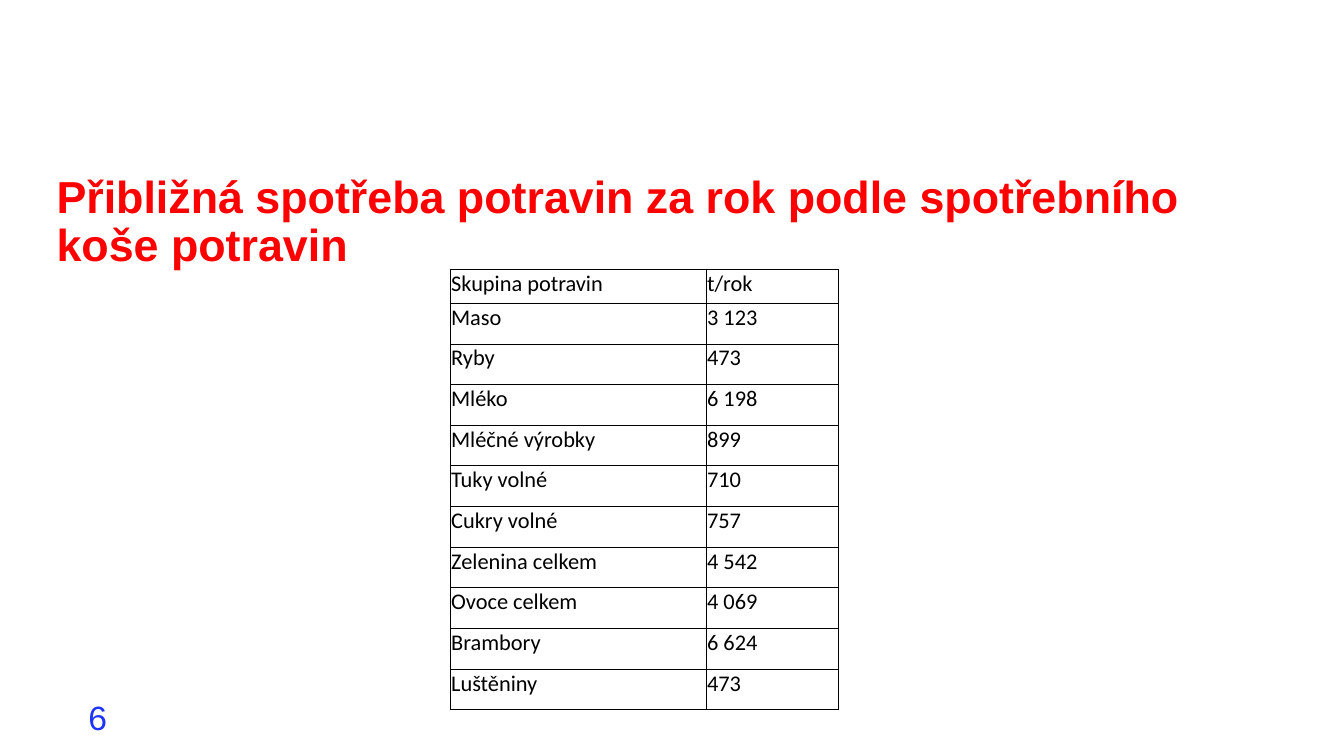
from lxml.etree import SubElement, Element
from pptx import Presentation
from pptx.dml.color import RGBColor
from pptx.enum.text import MSO_ANCHOR, PP_ALIGN
from pptx.oxml.ns import qn
from pptx.util import Cm, Pt

RED = RGBColor(0xFF, 0x00, 0x00)
BLUE = RGBColor(0x1D, 0x34, 0xFD)
BLACK = RGBColor(0x00, 0x00, 0x00)

TITLE_FONT = {"name": "Arial", "size": Pt(32), "bold": True}
NUMBER_FONT = {"name": "Arial", "size": Pt(24)}
CELL_FONT = {"name": "Calibri", "size": Pt(16), "bold": False}
CELL_FORMAT = {
    "margin_left": Cm(0.02),
    "margin_right": Cm(0.02),
    "margin_top": Cm(0.02),
    "margin_bottom": Cm(0),
    "vertical_anchor": MSO_ANCHOR.TOP,
}

CONSUMPTION = [
    ("Skupina potravin", "t/rok"),
    ("Maso", "3 123"),
    ("Ryby", "473"),
    ("Mléko", "6 198"),
    ("Mléčné výrobky", "899"),
    ("Tuky volné", "710"),
    ("Cukry volné", "757"),
    ("Zelenina celkem", "4 542"),
    ("Ovoce celkem", "4 069"),
    ("Brambory", "6 624"),
    ("Luštěniny", "473"),
]
COLUMN_WIDTHS = [Cm(6.45), Cm(3.33)]
TABLE_HEIGHT = Cm(11.1)
HEADER_HEIGHT = Cm(0.86)


def style_font(paragraph, font_format, color):
    for attribute, value in font_format.items():
        setattr(paragraph.font, attribute, value)
    paragraph.font.color.rgb = color


def add_borders(cell):
    properties = cell._tc.get_or_add_tcPr()
    for position, side in enumerate(("lnL", "lnR", "lnT", "lnB")):
        border = Element(qn(f"a:{side}"), w=str(Pt(0.5)))
        fill = SubElement(border, qn("a:solidFill"))
        SubElement(fill, qn("a:srgbClr"), val=str(BLACK))
        properties.insert(position, border)


deck = Presentation()
deck.slide_width, deck.slide_height = Cm(33.87), Cm(19.05)
slide = deck.slides.add_slide(deck.slide_layouts[5])

page_number = slide.shapes.add_textbox(Cm(1.98), Cm(17.55), Cm(7.62), Cm(1.02))
page_number.text_frame.word_wrap = True
page_number.text_frame.vertical_anchor = MSO_ANCHOR.MIDDLE
page_number.text_frame.text = "6"
style_font(page_number.text_frame.paragraphs[0], NUMBER_FONT, BLUE)

heading = slide.shapes.title
heading.left, heading.top = Cm(1.17), Cm(4.24)
heading.width, heading.height = Cm(30.07), Cm(2.77)
heading.text_frame.text = "Přibližná spotřeba potravin za rok podle spotřebního koše potravin"
heading.text_frame.vertical_anchor = MSO_ANCHOR.MIDDLE
heading_line = heading.text_frame.paragraphs[0]
heading_line.alignment = PP_ALIGN.LEFT
heading_line.line_spacing = 0.9
style_font(heading_line, TITLE_FONT, RED)

food_table = slide.shapes.add_table(
    len(CONSUMPTION), len(COLUMN_WIDTHS),
    Cm(11.35), Cm(6.78), sum(COLUMN_WIDTHS), TABLE_HEIGHT,
).table
food_table.first_row = False
food_table.horz_banding = False
for column, width in zip(food_table.columns, COLUMN_WIDTHS):
    column.width = width

food_height = (TABLE_HEIGHT - HEADER_HEIGHT) // (len(CONSUMPTION) - 1)
for index, (row, entries) in enumerate(zip(food_table.rows, CONSUMPTION)):
    row.height = food_height if index else HEADER_HEIGHT
    for cell, entry in zip(row.cells, entries):
        cell.text = entry
        for attribute, value in CELL_FORMAT.items():
            setattr(cell, attribute, value)
        cell.fill.background()
        add_borders(cell)
        style_font(cell.text_frame.paragraphs[0], CELL_FONT, BLACK)

deck.save("out.pptx")
